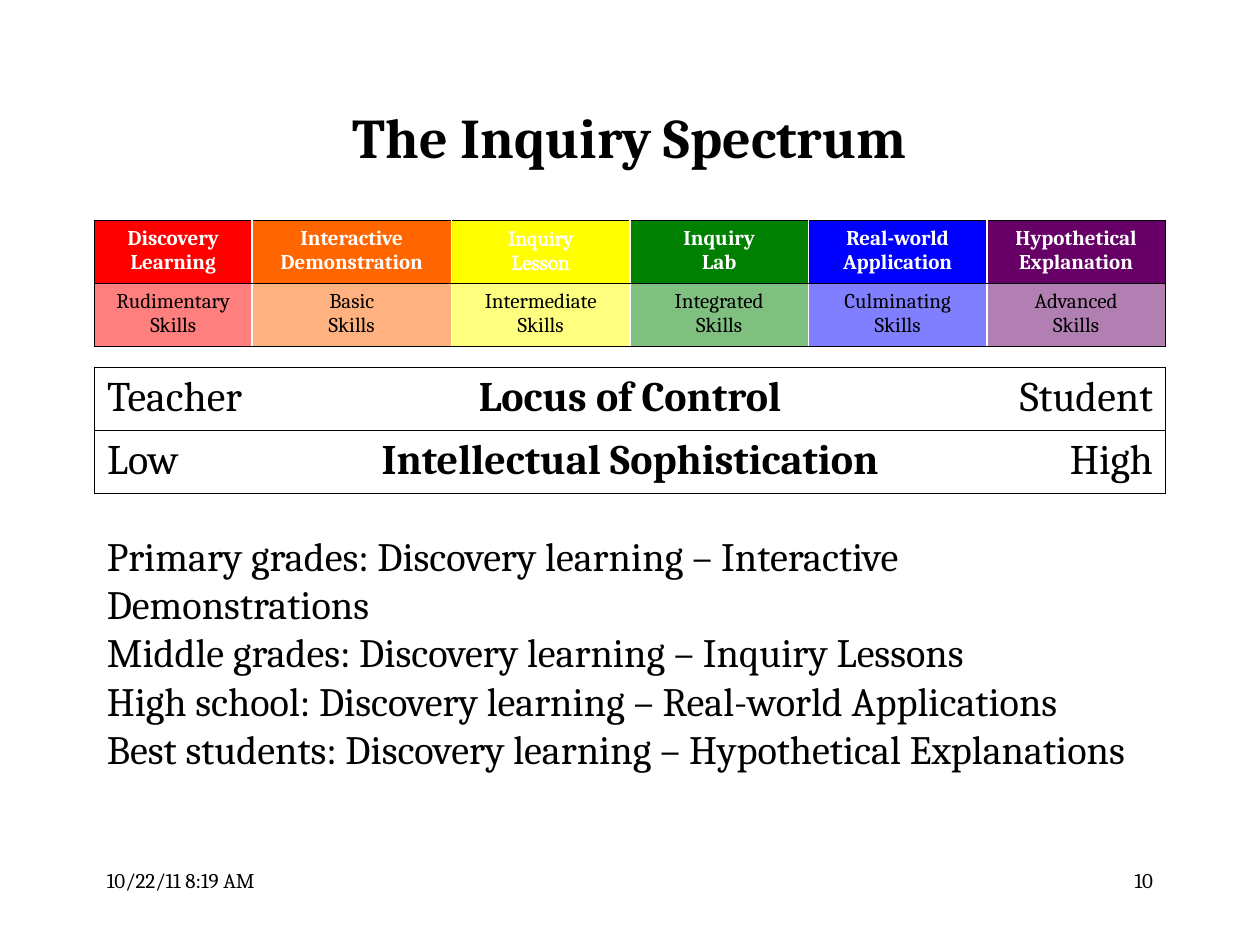
import pptx
import pptx.dml.color
import pptx.enum.text
import pptx.oxml
import pptx.oxml.ns
import pptx.util

RGB = pptx.dml.color.RGBColor
ALIGN = pptx.enum.text.PP_ALIGN
ANCHOR = pptx.enum.text.MSO_ANCHOR

PX = 7620  # 120 px to the inch
FONT = "Cambria"
BLACK = RGB(0x00, 0x00, 0x00)
WHITE = RGB(0xFF, 0xFF, 0xFF)
RED = RGB(0xFF, 0x00, 0x00)
ORANGE = RGB(0xFF, 0x66, 0x00)
YELLOW = RGB(0xFF, 0xFF, 0x00)
GREEN = RGB(0x00, 0x80, 0x00)
BLUE = RGB(0x00, 0x00, 0xFF)
PURPLE = RGB(0x66, 0x00, 0x66)

LEFT, WIDTH, ROW_HEIGHT = 90, 1020, 58

# Level, skills, colour, column width
SPECTRUM = [
    ("Discovery Learning", "Rudimentary Skills", RED, 150),
    ("Interactive Demonstration", "Basic\nSkills", ORANGE, 190),
    ("Inquiry\nLesson", "Intermediate\nSkills", YELLOW, 170),
    ("Inquiry\nLab", "Integrated\nSkills", GREEN, 170),
    ("Real-world\nApplication", "Culminating\nSkills", BLUE, 170),
    ("Hypothetical Explanation", "Advanced\nSkills", PURPLE, 170),
]
SCALES = [
    ("Teacher", "Locus of Control", "Student"),
    ("Low", "Intellectual Sophistication", "High"),
]
GRADES = """Primary grades: Discovery learning – Interactive Demonstrations
Middle grades: Discovery learning – Inquiry Lessons
High school: Discovery learning – Real-world Applications
Best students: Discovery learning – Hypothetical Explanations"""


def px(value):
    return pptx.util.Emu(value * PX)


def line_xml(tag, color, width):
    """Return a line element; no colour means no line."""
    paint = "<a:noFill/>"
    if color is not None:
        paint = f'<a:solidFill><a:srgbClr val="{color}"/></a:solidFill>'
    namespace = pptx.oxml.ns.nsdecls("a")
    return pptx.oxml.parse_xml(
        f'<a:{tag} {namespace} w="{int(width * 12700)}">{paint}</a:{tag}>')


def write(frame, text, size=12, color=BLACK, bold=False, align=ALIGN.LEFT,
          outline=None):
    """Fill a text frame, one paragraph for each line of text."""
    frame.word_wrap = True
    for index, line in enumerate(text.split("\n")):
        para = frame.paragraphs[0] if index == 0 else frame.add_paragraph()
        para.alignment = align
        span = para.add_run()
        span.text = line
        span.font.name = FONT
        span.font.size = pptx.util.Pt(size)
        span.font.bold = bold
        span.font.color.rgb = color
        if outline is not None:
            span._r.get_or_add_rPr().insert(0, line_xml("ln", outline, 1.45))


def add_text(page, left, top, width, height, text, anchor=ANCHOR.TOP, **style):
    box = page.shapes.add_textbox(px(left), px(top), px(width), px(height))
    box.text_frame.vertical_anchor = anchor
    write(box.text_frame, text, **style)


def add_table(page, top, widths, inner):
    """Add a two-row table framed in black, with inner column lines."""
    shape = page.shapes.add_table(2, len(widths), px(LEFT), px(top),
                                  px(WIDTH), px(2 * ROW_HEIGHT))
    table = shape.table
    table.first_row = table.horz_banding = False
    for column, width in zip(table.columns, widths):
        column.width = px(width)
    last = len(widths) - 1
    for row in range(2):
        for column in range(len(widths)):
            edges = {
                "lnL": BLACK if column == 0 else inner,
                "lnR": BLACK if column == last else inner,
                "lnT": BLACK,
                "lnB": BLACK,
            }
            properties = table.cell(row, column)._tc.get_or_add_tcPr()
            for tag, color in edges.items():
                properties.append(line_xml(tag, color, 1))
    return table


def fill_cell(cell, text, fill, alpha=100, **style):
    cell.fill.solid()
    cell.fill.fore_color.rgb = fill
    if alpha < 100:
        solid = cell._tc.tcPr.find(pptx.oxml.ns.qn("a:solidFill"))
        solid[0].append(pptx.oxml.parse_xml(
            f'<a:alpha {pptx.oxml.ns.nsdecls("a")} val="{alpha * 1000}"/>'))
    write(cell.text_frame, text, **style)


def add_spectrum(page):
    table = add_table(page, 210, [entry[3] for entry in SPECTRUM], WHITE)
    for column, (level, skills, color, _) in enumerate(SPECTRUM):
        outlined = color == YELLOW
        fill_cell(table.cell(0, column), level, color, color=WHITE,
                  bold=not outlined, align=ALIGN.CENTER,
                  outline=WHITE if outlined else None)
        fill_cell(table.cell(1, column), skills, color, alpha=50,
                  align=ALIGN.CENTER)


def add_scales(page):
    table = add_table(page, 350, [240, 540, 240], None)
    aligns = (ALIGN.LEFT, ALIGN.CENTER, ALIGN.RIGHT)
    for row, labels in enumerate(SCALES):
        for column, (label, align) in enumerate(zip(labels, aligns)):
            fill_cell(table.cell(row, column), label, WHITE, size=24,
                      bold=align == ALIGN.CENTER, align=align)


def main():
    deck = pptx.Presentation()
    deck.slide_width, deck.slide_height = px(1200), px(900)
    page = deck.slides.add_slide(deck.slide_layouts[6])

    # Title
    add_text(page, LEFT, 80, WIDTH, 100, "The Inquiry Spectrum",
             anchor=ANCHOR.MIDDLE, size=32, bold=True, align=ALIGN.CENTER)

    # Tables
    add_scales(page)
    add_spectrum(page)

    # Grade levels
    add_text(page, LEFT, 500, 1030, 198, GRADES, size=23)

    # Footer
    add_text(page, LEFT, 820, 250, 60, "10/22/11 8:19 AM")
    add_text(page, 860, 820, 250, 60, "10", align=ALIGN.RIGHT)

    deck.save("out.pptx")


if __name__ == "__main__":
    main()
